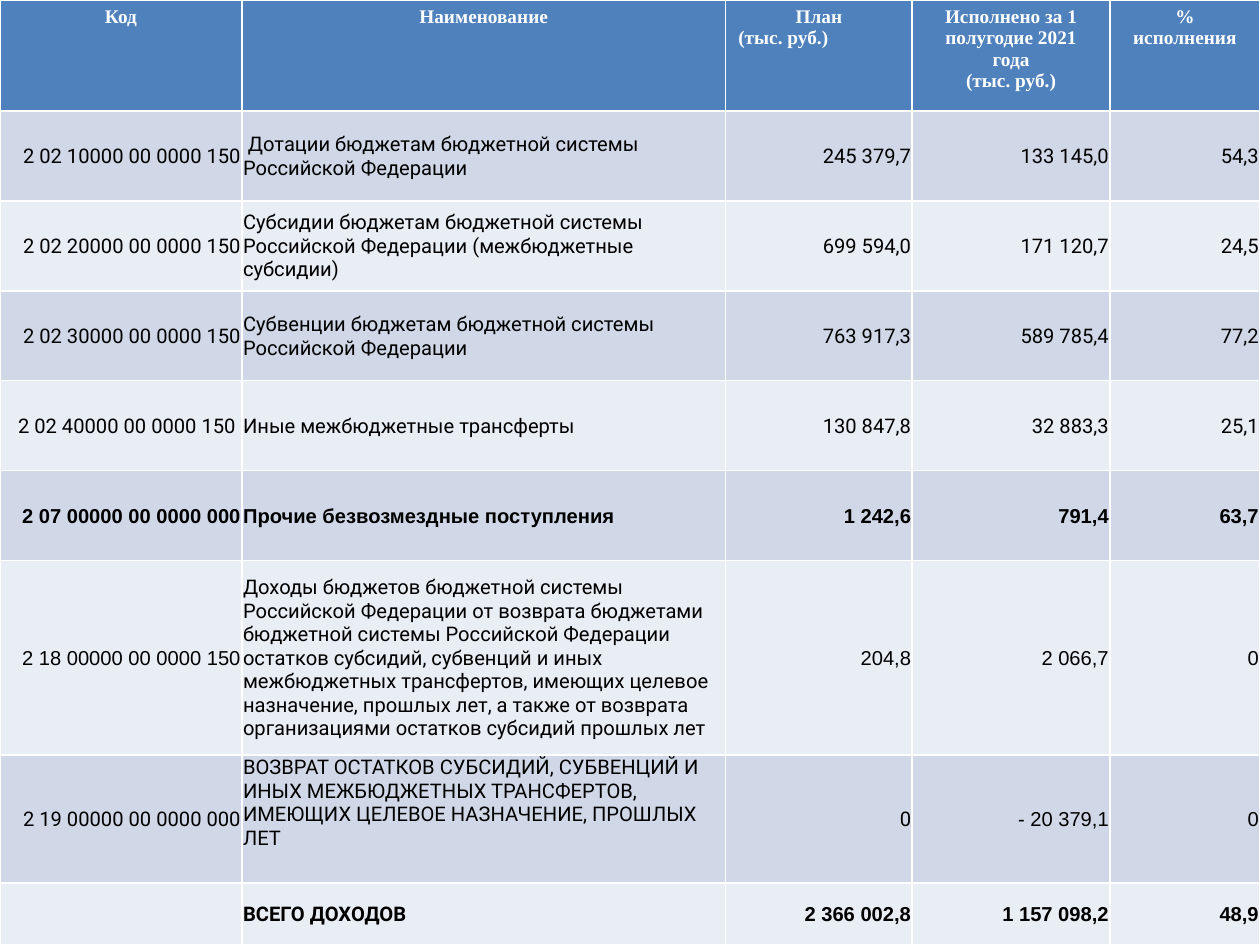
from pptx import Presentation
from pptx.dml.color import RGBColor
from pptx.enum.text import MSO_ANCHOR, PP_ALIGN
from pptx.util import Pt

LEFT, MID, RIGHT = PP_ALIGN.LEFT, PP_ALIGN.CENTER, PP_ALIGN.RIGHT
TOP, CENTER = MSO_ANCHOR.TOP, MSO_ANCHOR.MIDDLE
SERIF, SANS, ARIAL = "Times New Roman", "Roboto", "Arial"
BLUE, DARK, LIGHT = "4F81BD", "D0D8E8", "E9EDF4"
WIDTHS = [138.2, 276.5, 106.6, 113, 85.7]
HEIGHTS = [63.4, *[51.4] * 5, 111, 73.4, 35.2]

HEAD = ["Код", "Наименование", "План\n(тыс. руб.)",
        "Исполнено за 1 полугодие 2021 года\n(тыс. руб.)", "% исполнения"]
ROWS = [
    ["2 02 10000 00 0000 150",
     " Дотации бюджетам бюджетной системы Российской Федерации",
     "245 379,7", "133 145,0", "54,3"],
    ["2 02 20000 00 0000 150",
     "Субсидии бюджетам бюджетной системы Российской Федерации "
     "(межбюджетные субсидии)",
     "699 594,0", "171 120,7", "24,5"],
    ["2 02 30000 00 0000 150",
     "Субвенции бюджетам бюджетной системы Российской Федерации",
     "763 917,3", "589 785,4", "77,2"],
    ["2 02 40000 00 0000 150 ", "Иные межбюджетные трансферты",
     "130 847,8", "32 883,3", "25,1"],
    ["2 07 00000 00 0000 000", "Прочие безвозмездные поступления",
     "1 242,6", "791,4", "63,7"],
    ["2 18 00000 00 0000 150",
     "Доходы бюджетов бюджетной системы Российской Федерации от возврата "
     "бюджетами бюджетной системы Российской Федерации остатков субсидий, "
     "субвенций и иных межбюджетных трансфертов, имеющих целевое назначение, "
     "прошлых лет, а также от возврата организациями остатков субсидий "
     "прошлых лет",
     "204,8", "2 066,7", "0"],
    ["2 19 00000 00 0000 000",
     "ВОЗВРАТ ОСТАТКОВ СУБСИДИЙ, СУБВЕНЦИЙ И ИНЫХ МЕЖБЮДЖЕТНЫХ ТРАНСФЕРТОВ, "
     "ИМЕЮЩИХ ЦЕЛЕВОЕ НАЗНАЧЕНИЕ, ПРОШЛЫХ ЛЕТ",
     "0", "- 20 379,1", "0"],
    ["", "ВСЕГО ДОХОДОВ", "2 366 002,8", "1 157 098,2", "48,9"],
]
FONTS = [[SANS] * 5] * 4 + [
    [ARIAL] * 5,
    [ARIAL, SANS, ARIAL, ARIAL, ARIAL],
    [SANS, SANS, SANS, ARIAL, ARIAL],
    [SANS, SANS, ARIAL, ARIAL, ARIAL],
]
BOLD = {4, 7}
RAISED = (6, 1)


def color(code):
    """Turn a hex string into a colour."""
    return RGBColor.from_string(code)


class Sheet:
    """Hold the slide and the style of its table."""

    def __init__(self, slide):
        self.slide = slide
        self.inset = Pt(0.7)

    def grid(self, widths, heights):
        """Add an empty table with the given columns and rows."""
        frame = self.slide.shapes.add_table(
            len(heights), len(widths), 0, 0, Pt(sum(widths)), Pt(sum(heights)))
        table = frame.table
        for col, width in zip(table.columns, widths):
            col.width = Pt(width)
        for row, height in zip(table.rows, heights):
            row.height = Pt(height)
        return table

    def cell(self, cell, text, fill, font, size, ink, bold, align):
        """Fill a cell and format its text."""
        cell.fill.solid()
        cell.fill.fore_color.rgb = color(fill)
        cell.text_frame.text = text
        for para in cell.text_frame.paragraphs:
            para.alignment = align
            for run in para.runs:
                run.font.name = font
                run.font.size = Pt(size)
                run.font.bold = bold
                run.font.color.rgb = color(ink)

    def head(self, cell, text):
        """Write a heading cell."""
        self.cell(cell, text, BLUE, SERIF, 11, "FFFFFF", True, MID)

    def body(self, cell, text, fill, font, bold, align, anchor):
        """Write a body cell with narrow margins."""
        self.cell(cell, text, fill, font, 11.5, "000000", bold, align)
        cell.vertical_anchor = anchor
        cell.margin_left = cell.margin_right = cell.margin_top = self.inset
        cell.margin_bottom = 0


def main():
    """Build the budget slide."""
    deck = Presentation()
    deck.slide_width, deck.slide_height = Pt(720), Pt(540)
    sheet = Sheet(deck.slides.add_slide(deck.slide_layouts[6]))
    table = sheet.grid(WIDTHS, HEIGHTS)
    for col, text in enumerate(HEAD):
        sheet.head(table.cell(0, col), text)
    table.cell(0, 2).text_frame.paragraphs[1].alignment = LEFT
    for row, (texts, fonts) in enumerate(zip(ROWS, FONTS)):
        fill = LIGHT if row % 2 else DARK
        for col, (text, font) in enumerate(zip(texts, fonts)):
            align = LEFT if col == 1 else RIGHT
            anchor = TOP if (row, col) == RAISED else CENTER
            sheet.body(table.cell(row + 1, col), text, fill, font,
                       row in BOLD, align, anchor)
    deck.save("out.pptx")


if __name__ == "__main__":
    main()
